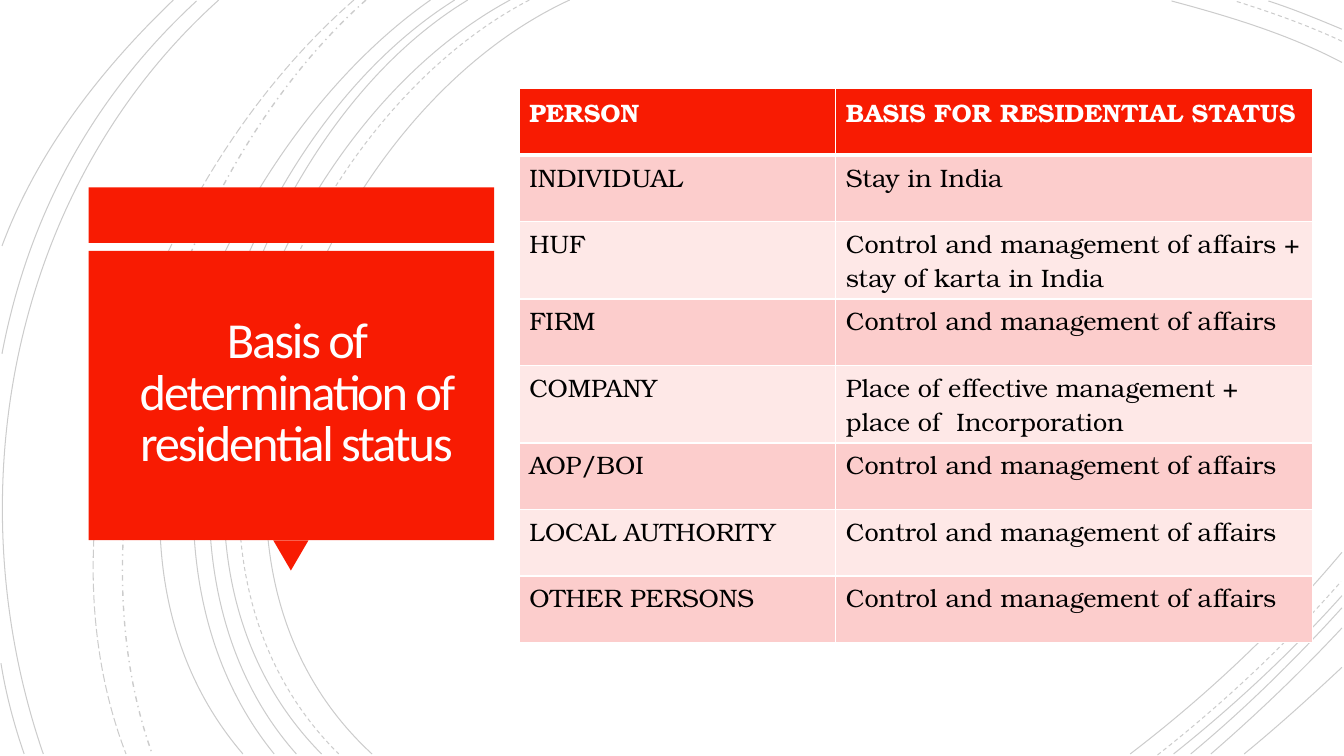
"""Build a slide on the basis of residential status."""
from lxml import etree
from pptx import Presentation
from pptx.dml.color import RGBColor
from pptx.enum.dml import MSO_LINE
from pptx.enum.shapes import MSO_SHAPE
from pptx.enum.text import MSO_ANCHOR, MSO_AUTO_SIZE, PP_ALIGN
from pptx.oxml import parse_xml
from pptx.oxml.ns import nsdecls, qn
from pptx.util import Inches, Pt

RED = RGBColor(0xF8, 0x1B, 0x02)
ROSE = RGBColor(0xFC, 0xCD, 0xCC)
BLUSH = RGBColor(0xFE, 0xE8, 0xE7)
WHITE = RGBColor(0xFF, 0xFF, 0xFF)
CREAM = RGBColor(0xFF, 0xFE, 0xFF)
BLACK = RGBColor(0, 0, 0)
RECT, WEDGE = MSO_SHAPE.RECTANGLE, MSO_SHAPE.ISOSCELES_TRIANGLE
SOLID, DASH = MSO_LINE.SOLID, MSO_LINE.DASH
LONG, DOTTED = MSO_LINE.LONG_DASH, MSO_LINE.DASH_DOT
CENTER, MIDDLE = PP_ALIGN.CENTER, MSO_ANCHOR.MIDDLE
NO_FIT = MSO_AUTO_SIZE.NONE

TITLE = "Basis of determination of residential status"
CONTROL = "Control and management of affairs"
ROWS = [
    ("PERSON", "BASIS FOR RESIDENTIAL STATUS"),
    ("INDIVIDUAL", "Stay in India"),
    ("HUF", CONTROL + " + stay of karta in India"),
    ("FIRM", CONTROL),
    ("COMPANY", "Place of effective management + place of  Incorporation"),
    ("AOP/BOI", CONTROL),
    ("LOCAL AUTHORITY", CONTROL),
    ("OTHER PERSONS", CONTROL),
]
ARCS = {
    (SOLID, 0.75): [
        [(5.65, 0), (3.15, 1.15), (1.43, 5.4), (3.69, 7.48)],
        [(13.31, 0.62), (12.78, 0.34), (12.18, 0.16), (11.62, 0.01)],
        [(11.21, 7.48), (11.97, 6.9), (12.69, 6.22), (13.31, 5.48)],
        [(5.06, 0), (2.7, 1.27), (1.1, 5.37), (3.19, 7.48)],
        [(13.31, 0.29), (13.07, 0.19), (12.83, 0.09), (12.58, 0.01)],
        [(11.64, 7.48), (12.23, 7.01), (12.8, 6.48), (13.31, 5.91)],
        [(4.64, 0), (2.44, 1.33), (1.1, 5.41), (2.94, 7.48)],
        [(11.81, 7.48), (12.34, 7.04), (12.84, 6.55), (13.31, 6.03)],
        [(4.51, 0), (2.31, 1.38), (0.97, 5.33), (2.72, 7.48)],
        [(12.01, 7.48), (12.46, 7.09), (12.9, 6.67), (13.31, 6.23)],
        [(4.27, 0), (2.17, 1.47), (0.53, 5.29), (2.41, 7.48)],
        [(12.34, 7.48), (12.67, 7.21), (12.99, 6.92), (13.31, 6.62)],
        [(2.17, 0), (0.11, 1.85), (-0.46, 4.9), (0.43, 7.48)],
        [(1.95, 0.01), (0.92, 0.96), (0.28, 2.14), (0.02, 3.51)],
        [(0.01, 6.58), (0.06, 6.89), (0.14, 7.19), (0.24, 7.48)],
        [(1.72, 0), (1, 0.69), (0.37, 1.5), (0.02, 2.44)],
    ],
    (DASH, 0.75): [
        [(5.25, 0), (2.85, 1.25), (1.23, 5.37), (3.36, 7.48)],
        [(13.31, 0.41), (12.97, 0.25), (12.6, 0.12), (12.25, 0.01)],
        [(11.48, 7.49), (12.13, 6.98), (12.75, 6.4), (13.3, 5.77)],
    ],
    (DOTTED, 1): [[(3.63, 0), (1.76, 1.66), (0.65, 5.09), (1.51, 7.48)]],
    (LONG, 0.75): [[(3.51, 0), (1.57, 1.69), (0.29, 4.99), (1.25, 7.48)]],
}


def add_arc(slide, left, top, points, dash, weight):
    """Draw one faint cubic curve through its control points."""
    spots = [(left + Inches(x), top + Inches(y)) for x, y in points]
    maker = slide.shapes.build_freeform(*spots[0])
    maker.add_line_segments(spots[1:], close=False)
    arc = maker.convert_to_shape()
    steps = list(arc._element.iter(qn("a:lnTo")))
    curve = etree.SubElement(steps[0].getparent(), qn("a:cubicBezTo"))
    for step in steps:
        curve.append(step[0])
        step.getparent().remove(step)
    arc.shadow.inherit = False
    arc.fill.background()
    arc.line.color.rgb = BLACK
    arc.line.width = Pt(weight)
    arc.line.dash_style = dash
    tint = next(arc.line._ln.iter(qn("a:srgbClr")))
    etree.SubElement(tint, qn("a:alpha"), val="20000")


def add_arcs(slide, left, top):
    """Draw the arcs of the backdrop from the given corner."""
    for (dash, weight), group in ARCS.items():
        for points in group:
            add_arc(slide, left, top, points, dash, weight)


def add_block(slide, kind, left, top, width, height):
    """Draw one plain red shape."""
    block = slide.shapes.add_shape(kind, left, top, width, height)
    block.shadow.inherit = False
    block.fill.solid()
    block.fill.fore_color.rgb = RED
    block.line.fill.background()
    return block


def add_panel(slide, left, top, width, height):
    """Place the red panel with its bar, pointer and title."""
    add_block(slide, RECT, left, top, width, Inches(0.55))
    base = top + Inches(0.63)
    tall = height - Inches(0.93)
    wedge = add_block(slide, WEDGE, left + Inches(1.83), base + tall,
                      Inches(0.35), Inches(0.3))
    wedge.rotation = 180
    add_block(slide, RECT, left, base, width, tall)

    title = slide.shapes.title
    slide.shapes._spTree.append(title._element)
    title.left, title.top = left + Inches(0.09), base + Inches(0.08)
    title.width, title.height = width - Inches(0.08), tall - Inches(0.18)
    frame = title.text_frame
    frame.text = TITLE
    frame.word_wrap = True
    frame.auto_size = NO_FIT
    frame.vertical_anchor = MIDDLE
    frame.margin_left = frame.margin_right = Inches(0.25)
    frame.margin_top = frame.margin_bottom = Inches(0.25)
    para = frame.paragraphs[0]
    para.alignment = CENTER
    para.line_spacing = 0.85
    para.font.size = Pt(36)
    para.font.name = "Calibri"
    para.font.color.rgb = CREAM
    para.runs[0]._r.get_or_add_rPr().set("spc", "-150")


def set_edges(cell, above, below):
    """Give a cell white borders, with its own top and bottom weights."""
    props = cell._tc.get_or_add_tcPr()
    sides = {"L": 1, "R": 1, "T": above, "B": below}
    for spot, (side, weight) in enumerate(sides.items()):
        props.insert(spot, parse_xml(
            f'<a:ln{side} {nsdecls("a")} w="{Pt(weight)}"><a:solidFill>'
            f'<a:srgbClr val="{WHITE}"/></a:solidFill></a:ln{side}>'))


def add_grid(slide, left, top, width, height):
    """Place the table of persons and their basis."""
    table = slide.shapes.add_table(
        len(ROWS), 2, left, top, width, height).table
    table.columns[0].width = Inches(3.14)
    table.columns[1].width = width - Inches(3.14)
    for r, row in enumerate(ROWS):
        head = r == 0
        for c, text in enumerate(row):
            cell = table.cell(r, c)
            cell.text = text
            cell.fill.solid()
            cell.fill.fore_color.rgb = RED if head else (BLUSH, ROSE)[r % 2]
            set_edges(cell, 3 if r == 1 else 1, 3 if head else 1)
            font = cell.text_frame.paragraphs[0].font
            font.name = "TeX Gyre Bonum"
            font.size = Pt(18)
            font.bold = head
            font.color.rgb = WHITE if head else BLACK


def main():
    """Build and save the slide."""
    deck = Presentation()
    deck.slide_width, deck.slide_height = Inches(13.33), Inches(7.5)
    slide = deck.slides.add_slide(deck.slide_layouts[5])
    slide.background.fill.solid()
    slide.background.fill.fore_color.rgb = WHITE
    add_arcs(slide, 0, 0)
    add_panel(slide, Inches(0.88), Inches(1.86), Inches(4.02), Inches(3.8))
    add_grid(slide, Inches(5.15), Inches(0.88), Inches(7.87), Inches(5.28))
    deck.save("out.pptx")


if __name__ == "__main__":
    main()
